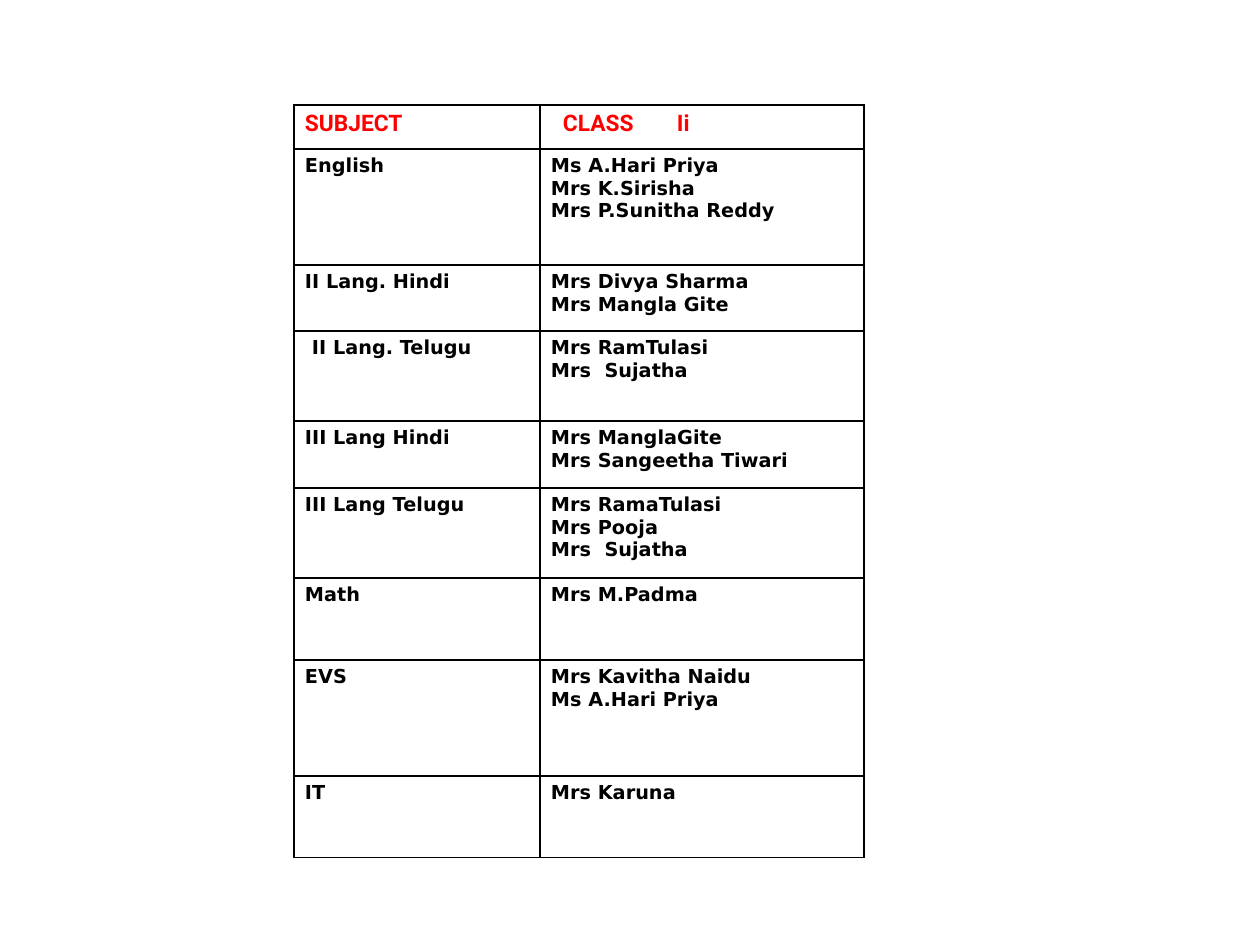
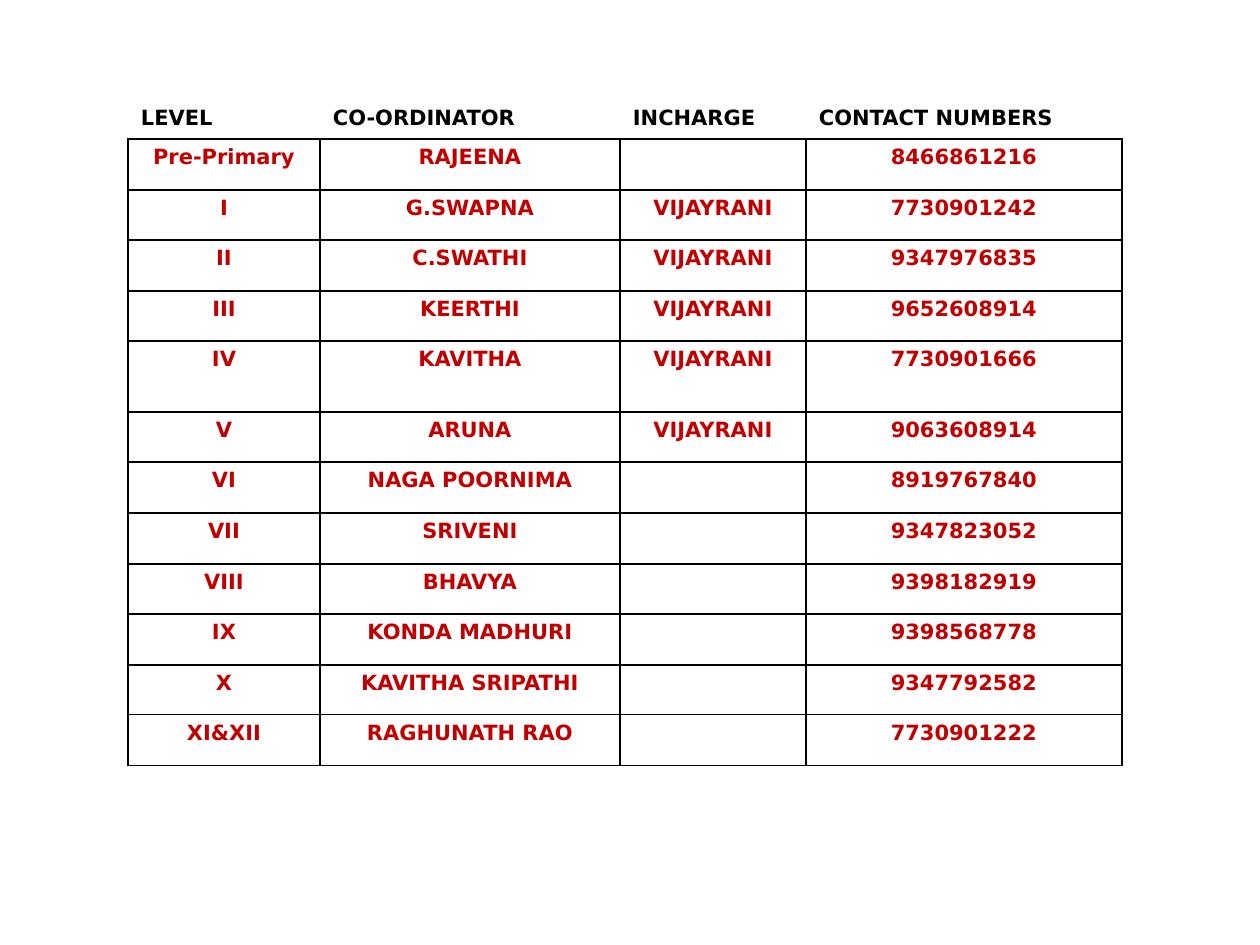
from itertools import pairwise

from lxml import etree
from pptx import Presentation
from pptx import util as u
from pptx.dml.color import RGBColor
from pptx.enum import text
from pptx.oxml import ns

PX = u.Inches(1) // 126
COLORS = {"black": "000000", "white": "FFFFFF", "red": "FF0000", "crimson": "C00000"}

TEACHERS = [
    ("SUBJECT", "CLASS\tIi"),
    ("English", "Ms A.Hari Priya\nMrs K.Sirisha\nMrs P.Sunitha Reddy"),
    ("II Lang. Hindi", "Mrs Divya Sharma\nMrs Mangla Gite"),
    ("II Lang. Telugu", "Mrs RamTulasi\nMrs  Sujatha"),
    ("III Lang Hindi", "Mrs ManglaGite\nMrs Sangeetha Tiwari"),
    ("III Lang Telugu", "Mrs RamaTulasi\nMrs Pooja\nMrs  Sujatha"),
    ("Math", "Mrs M.Padma"),
    ("EVS", "Mrs Kavitha Naidu\nMs A.Hari Priya"),
    ("IT", "Mrs Karuna"),
]
COORDINATORS = [
    ("LEVEL", "CO-ORDINATOR", "INCHARGE", "CONTACT NUMBERS"),
    ("Pre-Primary", "RAJEENA", "", "8466861216"),
    ("I", "G.SWAPNA", "VIJAYRANI", "7730901242"),
    ("II", "C.SWATHI", "VIJAYRANI", "9347976835"),
    ("III", "KEERTHI", "VIJAYRANI", "9652608914"),
    ("IV", "KAVITHA", "VIJAYRANI", "7730901666"),
    ("V", "ARUNA", "VIJAYRANI", "9063608914"),
    ("VI", "NAGA POORNIMA", "", "8919767840"),
    ("VII", "SRIVENI", "", "9347823052"),
    ("VIII", "BHAVYA", "", "9398182919"),
    ("IX", "KONDA MADHURI", "", "9398568778"),
    ("X", "KAVITHA SRIPATHI", "", "9347792582"),
    ("XI&XII", "RAGHUNATH RAO", "", "7730901222"),
]
LEFT, CENTER = text.PP_ALIGN.LEFT, text.PP_ALIGN.CENTER
ROSTERS = [
    {
        "entries": TEACHERS,
        "columns": [294, 540, 864],
        "rows": [105, 149, 265, 331, 421, 488, 578, 660, 776, 858],
        "inset": 11,
        "header": ("Roboto", 13, "red", LEFT),
        "body": ("DejaVu Sans", 11, "black", LEFT),
        "header_edge": "black",
        "indents": {(0, 1): 12, (3, 0): 7},
        "tabs": {(0, 1): 99},
    },
    {
        "entries": COORDINATORS,
        "columns": [128, 320, 620, 806, 1122],
        "rows": [100, 139, 190, 240, 291, 341, 412, 462, 513, 564, 614, 665, 715, 766],
        "inset": 13,
        "header": ("DejaVu Sans", 12, "black", LEFT),
        "body": ("DejaVu Sans", 12, "crimson", CENTER),
        "header_edge": "white",
        "indents": {},
        "tabs": {},
    },
]


def draw_borders(cell, edge, bottom):
    properties = cell._tc.get_or_add_tcPr()
    for side, color in zip("LRTB", (edge, edge, edge, bottom)):
        line = etree.SubElement(properties, ns.qn(f"a:ln{side}"), w=str(u.Pt(1)))
        fill = etree.SubElement(line, ns.qn("a:solidFill"))
        etree.SubElement(fill, ns.qn("a:srgbClr"), val=COLORS[color])


def write_cell(cell, content, style, indent, tab):
    face, size, color, align = style
    frame = cell.text_frame
    for number, words in enumerate(content.split("\n")):
        paragraph = frame.add_paragraph() if number else frame.paragraphs[0]
        paragraph.alignment = align
        properties = paragraph._p.get_or_add_pPr()
        if indent:
            properties.set("marL", "0")
            properties.set("indent", str(indent * PX))
        if tab:
            stops = etree.SubElement(properties, ns.qn("a:tabLst"))
            etree.SubElement(stops, ns.qn("a:tab"), pos=str(tab * PX), algn="l")
        if not words:
            etree.SubElement(paragraph._p, ns.qn("a:endParaRPr"), sz=str(size * 100))
            continue
        run = paragraph.add_run()
        run.text = words
        run.font.name, run.font.size, run.font.bold = face, u.Pt(size), True
        run.font.color.rgb = RGBColor.from_string(COLORS[color])


def add_roster(slide, roster):
    entries, columns, rows = roster["entries"], roster["columns"], roster["rows"]
    box = (columns[0], rows[0], columns[-1] - columns[0], rows[-1] - rows[0])
    table = slide.shapes.add_table(
        len(entries), len(entries[0]), *(length * PX for length in box)
    ).table
    table.first_row = table.horz_banding = False
    for column, (start, end) in zip(table.columns, pairwise(columns)):
        column.width = (end - start) * PX
    for row, (start, end) in zip(table.rows, pairwise(rows)):
        row.height = (end - start) * PX
    for r, entry in enumerate(entries):
        for c, content in enumerate(entry):
            cell = table.cell(r, c)
            cell.margin_left = cell.margin_right = roster["inset"] * PX
            cell.margin_top = cell.margin_bottom = 6 * PX
            draw_borders(cell, "black" if r else roster["header_edge"], "black")
            cell.fill.background()
            write_cell(cell, content, roster["body" if r else "header"],
                       roster["indents"].get((r, c)), roster["tabs"].get((r, c)))


def main():
    deck = Presentation()
    deck.slide_width, deck.slide_height = 1260 * PX, 945 * PX
    for roster in ROSTERS:
        add_roster(deck.slides.add_slide(deck.slide_layouts[6]), roster)
    deck.save("out.pptx")


if __name__ == "__main__":
    main()
